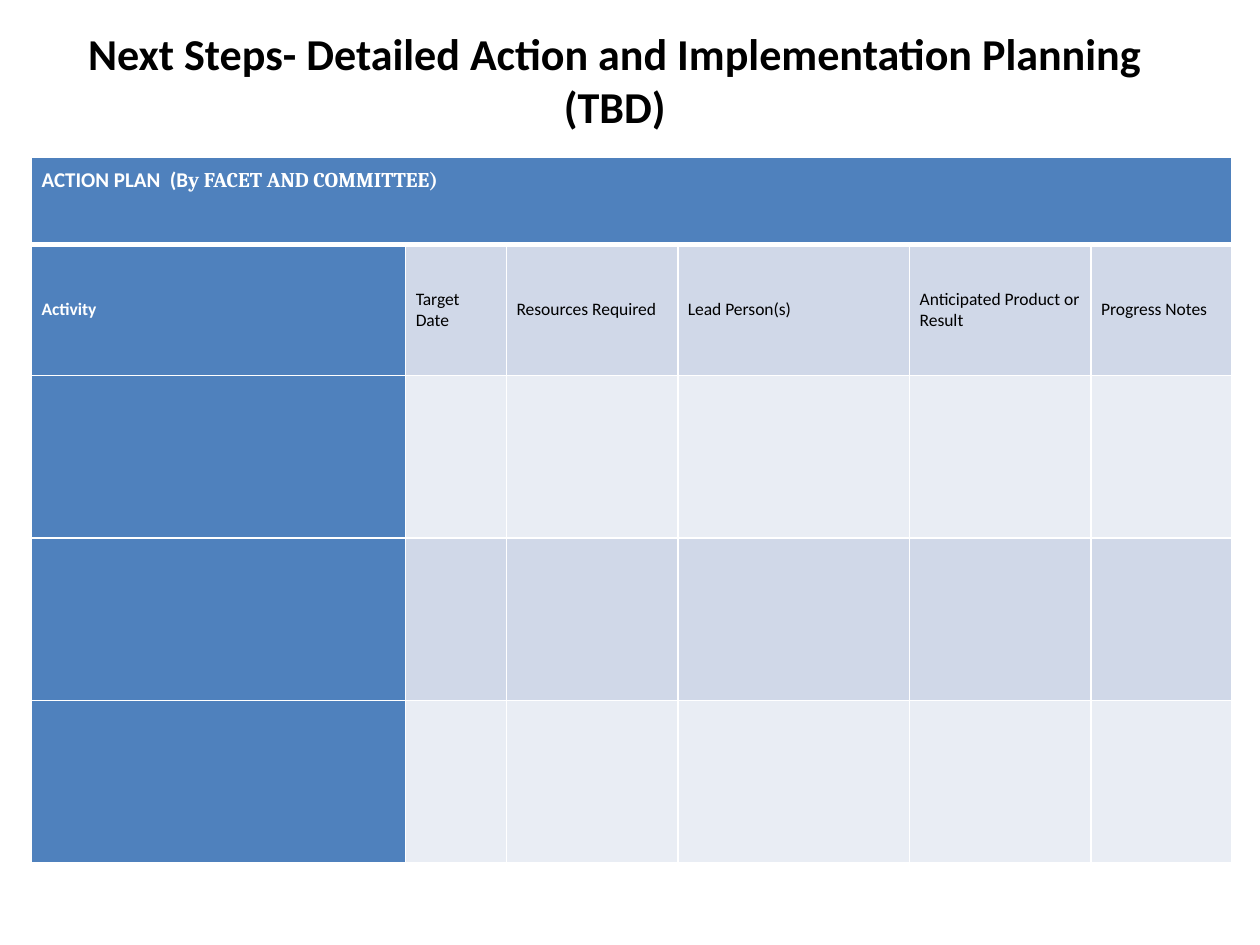
import pptx
import pptx.dml.color
import pptx.enum.text
import pptx.util
from lxml import etree
from pptx.oxml.ns import qn

Inches, Pt = pptx.util.Inches, pptx.util.Pt
RGBColor = pptx.dml.color.RGBColor
ANCHOR = pptx.enum.text.MSO_ANCHOR

WHITE = RGBColor(0xFF, 0xFF, 0xFF)
BLACK = RGBColor(0x00, 0x00, 0x00)
BLUE = RGBColor(0x4F, 0x81, 0xBD)
BANDS = [RGBColor(0xE9, 0xED, 0xF4), RGBColor(0xD0, 0xD8, 0xE8)]

COLUMNS = [2.97, 0.8, 1.36, 1.84, 1.44, 1.12]
ROWS = [0.69, 1.04] + [1.29] * 3
HEADINGS = ["Activity", "Target Date", "Resources Required", "Lead Person(s)",
            "Anticipated Product or Result", "Progress Notes"]


def style_run(r, size, color, bold, name="Calibri"):
    r.font.size = Pt(size)
    r.font.color.rgb = color
    r.font.bold = bold
    r.font.name = name


def add_borders(cell, widths):
    """Draw white borders; widths maps a side (L, R, T, B) to points."""
    tc_pr = cell._tc.get_or_add_tcPr()
    for side, width in widths.items():
        ln = etree.SubElement(tc_pr, qn(f"a:ln{side}"), w=str(Pt(width)))
        fill = etree.SubElement(ln, qn("a:solidFill"))
        etree.SubElement(fill, qn("a:srgbClr"), val=str(WHITE))


prs = pptx.Presentation()
prs.slide_width, prs.slide_height = Inches(10), Inches(7.5)
s = prs.slides.add_slide(prs.slide_layouts[6])

# Title
title = s.shapes.add_textbox(0, Inches(0.17), Inches(9.76), Inches(0.92))
tf = title.text_frame
tf.word_wrap = True
tf.vertical_anchor = ANCHOR.MIDDLE
p = tf.paragraphs[0]
p.text = "Next Steps- Detailed Action and Implementation Planning\v(TBD)"
p.alignment = pptx.enum.text.PP_ALIGN.CENTER
for r in p.runs:
    style_run(r, 25.2, BLACK, True)

# Action plan table
table = s.shapes.add_table(len(ROWS), len(COLUMNS), Inches(0.25), Inches(1.25),
                           Inches(sum(COLUMNS)), Inches(sum(ROWS))).table
for column, width in zip(table.columns, COLUMNS):
    column.width = Inches(width)
for row, height in zip(table.rows, ROWS):
    row.height = Inches(height)

for i, row in enumerate(table.rows):
    for j, cell in enumerate(row.cells):
        add_borders(cell, {"L": 1, "R": 1, "T": 3 if i == 1 else 1, "B": 3 if i == 0 else 1})
        cell.fill.solid()
        cell.fill.fore_color.rgb = BLUE if i == 0 or j == 0 else BANDS[i % 2]
        cell.margin_left = cell.margin_right = Inches(0.08)
        cell.margin_top = cell.margin_bottom = Inches(0.08)

# Banner row
banner = table.cell(0, 0)
banner.merge(table.cell(0, len(COLUMNS) - 1))
p = banner.text_frame.paragraphs[0]
for text, name in [("ACTION PLAN  (B", "Calibri"), ("y FACET AND COMMITTEE)", "Cambria")]:
    r = p.add_run()
    r.text = text
    style_run(r, 12, WHITE, True, name)

# Column headings
for j, heading in enumerate(HEADINGS):
    cell = table.cell(1, j)
    cell.vertical_anchor = ANCHOR.MIDDLE
    cell.text_frame.text = heading
    style_run(cell.text_frame.paragraphs[0].runs[0], 10, BLACK if j else WHITE, j == 0)

prs.save("out.pptx")
